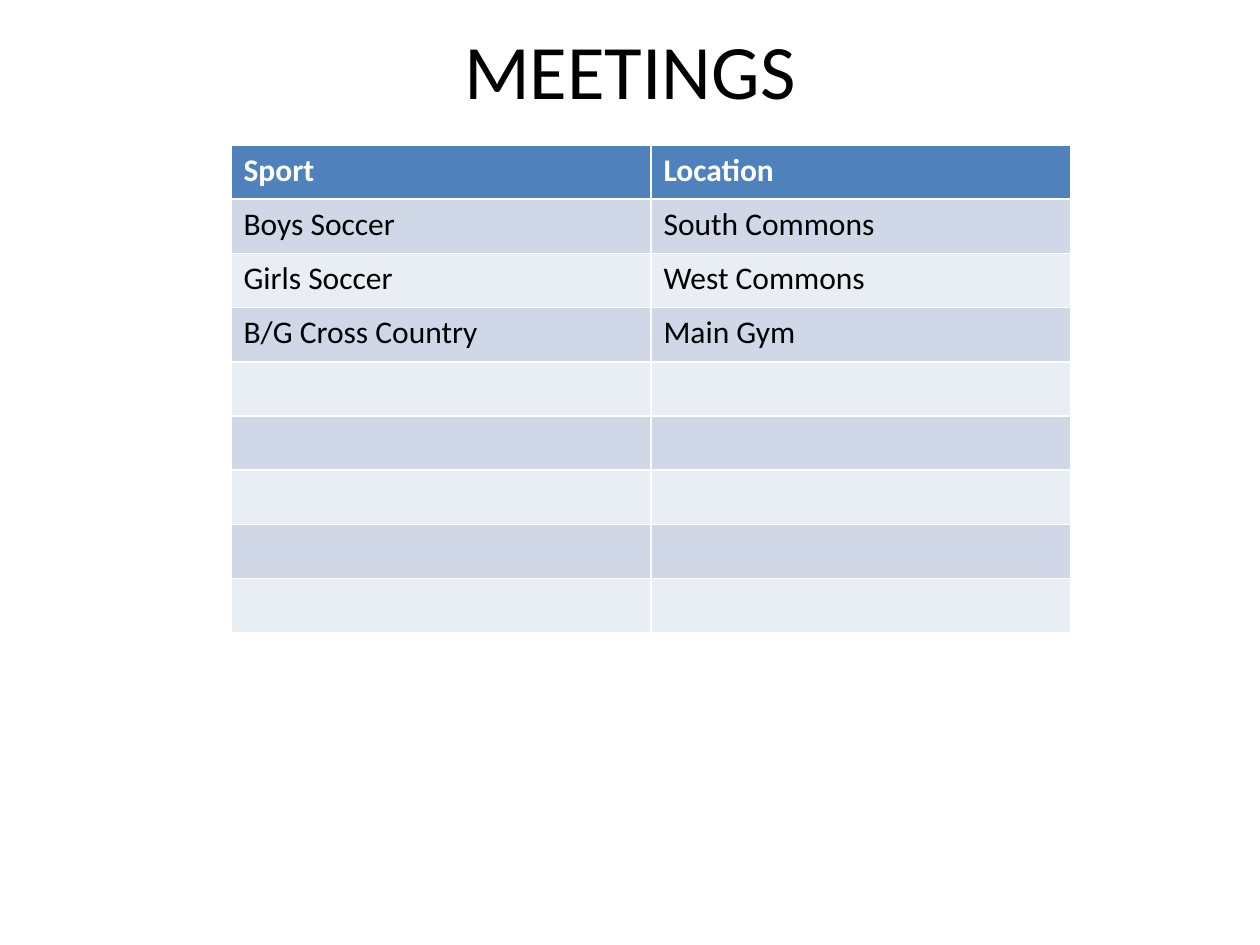
from pptx import Presentation
from pptx.dml.color import RGBColor
from pptx.enum.text import MSO_ANCHOR, PP_ALIGN
from pptx.util import Pt

ROWS = [
    ("Sport", "Location"),
    ("Boys Soccer", "South Commons"),
    ("Girls Soccer", "West Commons"),
    ("B/G Cross Country", "Main Gym"),
]
ROW_COUNT = 9
HEADER_FILL = "4F81BD"
BAND_FILLS = ("E9EDF4", "D0D8E8")


def color(value):
    return RGBColor.from_string(value)


def add_run(p, text, size, hex_color, bold=False):
    r = p.add_run()
    r.text = text
    r.font.name = "Calibri"
    r.font.size = Pt(size)
    r.font.bold = bold
    r.font.color.rgb = color(hex_color)


def add_title(s, left, top, width, height):
    sp = s.shapes.add_textbox(Pt(left), Pt(top), Pt(width), Pt(height))
    tf = sp.text_frame
    tf.word_wrap = True
    tf.vertical_anchor = MSO_ANCHOR.MIDDLE
    p = tf.paragraphs[0]
    p.alignment = PP_ALIGN.CENTER
    add_run(p, "MEETINGS", 44, "000000")


def add_meetings_table(s, left, top, width, height):
    """Add the table; its default style supplies the white cell borders."""
    table = s.shapes.add_table(ROW_COUNT, len(ROWS[0]), Pt(left), Pt(top),
                               Pt(width), Pt(height)).table
    for i, row in enumerate(table.rows):
        row.height = Pt(height / ROW_COUNT)
        header = i == 0
        for cell in row.cells:
            cell.fill.solid()
            cell.fill.fore_color.rgb = color(HEADER_FILL if header else BAND_FILLS[i % 2])
        if i < len(ROWS):
            for cell, text in zip(row.cells, ROWS[i]):
                add_run(cell.text_frame.paragraphs[0], text, 18,
                        "FFFFFF" if header else "000000", header)


def main():
    prs = Presentation()
    prs.slide_width, prs.slide_height = Pt(720), Pt(540)
    s = prs.slides.add_slide(prs.slide_layouts[6])
    add_title(s, 36, -6, 648, 90)
    add_meetings_table(s, 132, 82.8, 480, 279)
    prs.save("out.pptx")


if __name__ == "__main__":
    main()
